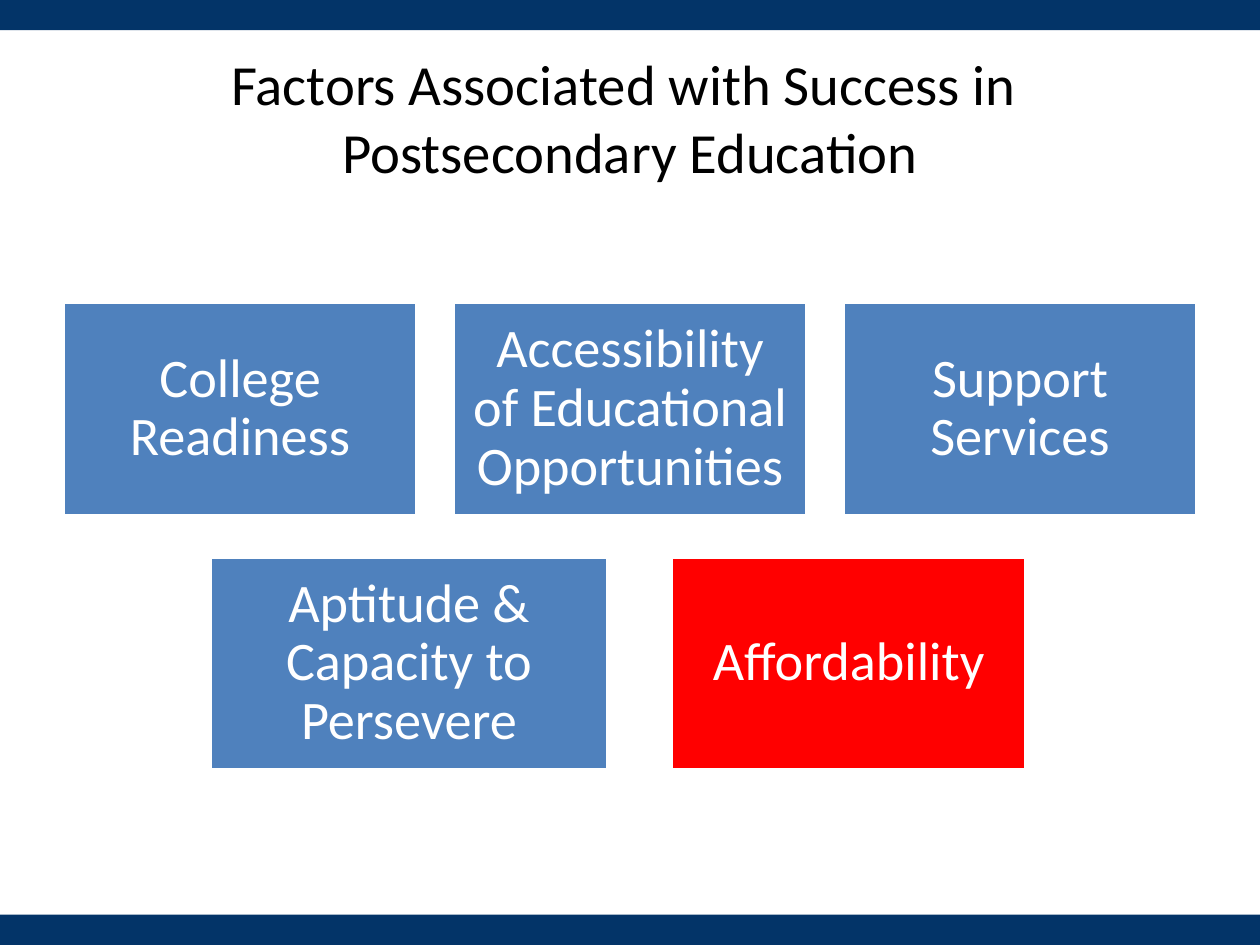
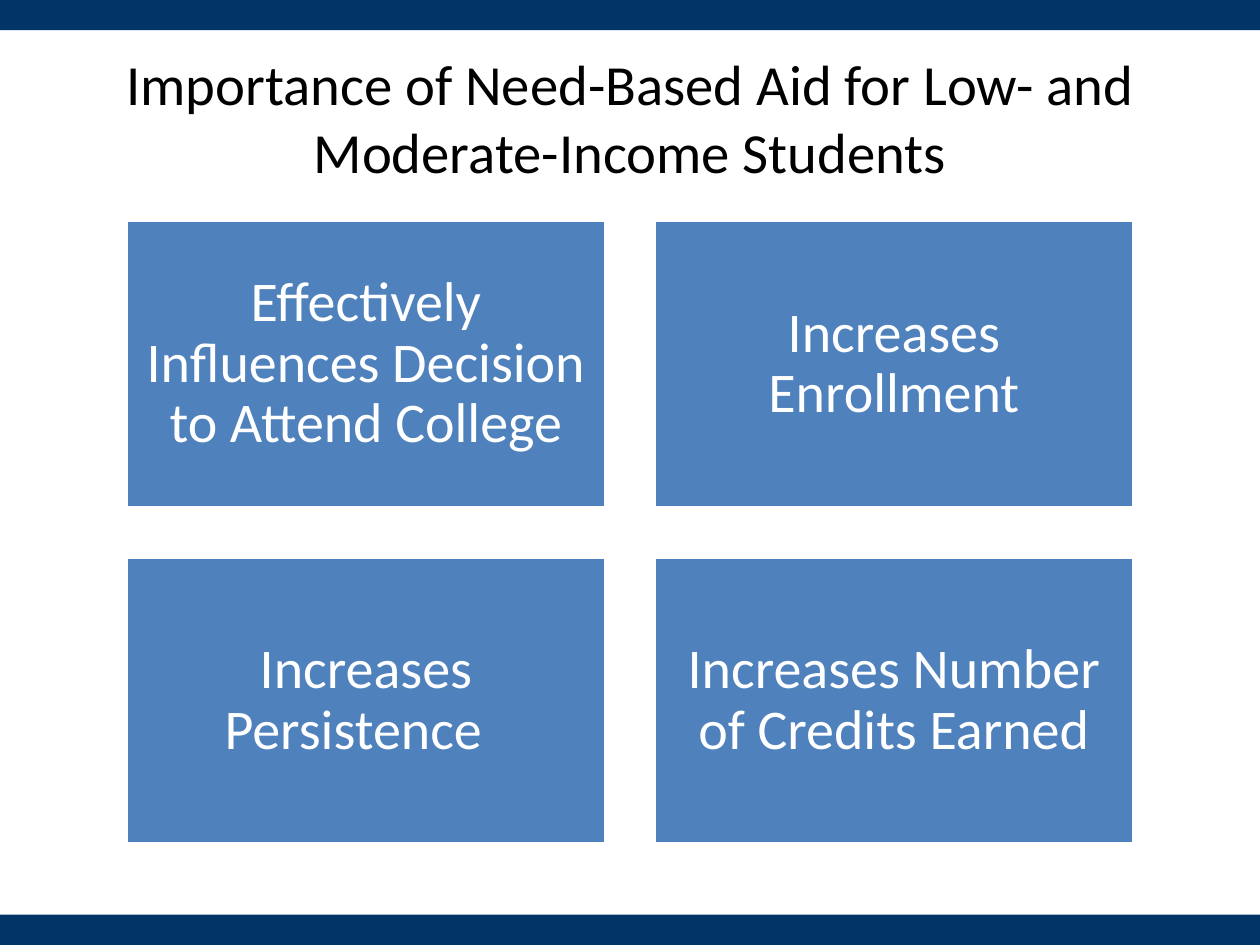
"""Build two slides on success in postsecondary education and need-based aid."""
from pptx import Presentation
from pptx.dml.color import RGBColor
from pptx.enum.shapes import MSO_SHAPE
from pptx.enum.text import MSO_ANCHOR, MSO_AUTO_SIZE, PP_ALIGN
from pptx.util import Inches, Pt

RECT = MSO_SHAPE.RECTANGLE
MIDDLE = MSO_ANCHOR.MIDDLE
CENTER = PP_ALIGN.CENTER
NO_FIT = MSO_AUTO_SIZE.NONE

NAVY = RGBColor(0x03, 0x34, 0x68)
BLUE = RGBColor(0x4F, 0x81, 0xBD)
RED = RGBColor(0xFF, 0x00, 0x00)
WHITE = RGBColor(0xFF, 0xFF, 0xFF)
BLACK = RGBColor(0x00, 0x00, 0x00)
FONT = "Calibri"

WIDE, HIGH = 10, 7.5
BAND = 0.24
EDGE = 0.5
LOW_ROW = 4.42


def write(shape, text, size, color, inset=0.1, spacing=None):
    frame = shape.text_frame
    frame.word_wrap = True
    frame.auto_size = NO_FIT
    frame.vertical_anchor = MIDDLE
    frame.margin_left = frame.margin_right = Inches(inset)
    frame.margin_top = frame.margin_bottom = Inches(inset)
    para = frame.paragraphs[0]
    para.text = text
    para.alignment = CENTER
    para.line_spacing = spacing
    for run in para.runs:
        run.font.name = FONT
        run.font.size = Pt(size)
        run.font.color.rgb = color


def block(slide, left, top, width, height, fill):
    shape = slide.shapes.add_shape(
        RECT, Inches(left), Inches(top), Inches(width), Inches(height))
    shape.shadow.inherit = False
    shape.fill.solid()
    shape.fill.fore_color.rgb = fill
    shape.line.fill.background()
    return shape


deck = Presentation()
deck.slide_width, deck.slide_height = Inches(WIDE), Inches(HIGH)

box_w, box_h = 2.81, 1.69
step = (WIDE - 2 * EDGE - box_w) / 2
factors = [
    (EDGE + col * step, 2.4, box_w, box_h, BLUE, text)
    for col, text in enumerate([
        "College Readiness",
        "Accessibility of Educational Opportunities",
        "Support Services",
    ])
] + [
    (5.33, LOW_ROW, box_w, box_h, RED, "Affordability"),
    (1.67, LOW_ROW, 3.15, box_h, BLUE, "Aptitude & Capacity to Persevere"),
]

aid_w, aid_h = 3.81, 2.28
effects = [
    (1 + num % 2 * (WIDE - 2 - aid_w), (1.75, LOW_ROW)[num // 2],
     aid_w, aid_h, BLUE, text)
    for num, text in enumerate([
        "Effectively Influences Decision to Attend College",
        "Increases Enrollment",
        "Increases Persistence  ",
        "Increases Number of Credits Earned",
    ])
]

pages = [
    ("Factors Associated with Success in \vPostsecondary Education",
     31, factors),
    ("Importance of Need-Based Aid for Low- and Moderate-Income Students",
     32, effects),
]

for head, size, boxes in pages:
    slide = deck.slides.add_slide(deck.slide_layouts[5])
    title = slide.shapes.title
    title.left, title.top = Inches(EDGE), Inches(0.3)
    title.width, title.height = Inches(WIDE - 2 * EDGE), Inches(1.25)
    write(title, head, 32.4, BLACK)

    for top in (HIGH - BAND, 0):
        block(slide, 0, top, WIDE, BAND, NAVY)

    for left, top, width, height, fill, text in boxes:
        box = block(slide, left, top, width, height, fill)
        box.line.color.rgb = WHITE
        box.line.width = Pt(2)
        write(box, text, size, WHITE, inset=0.13, spacing=0.9)

deck.save("out.pptx")
